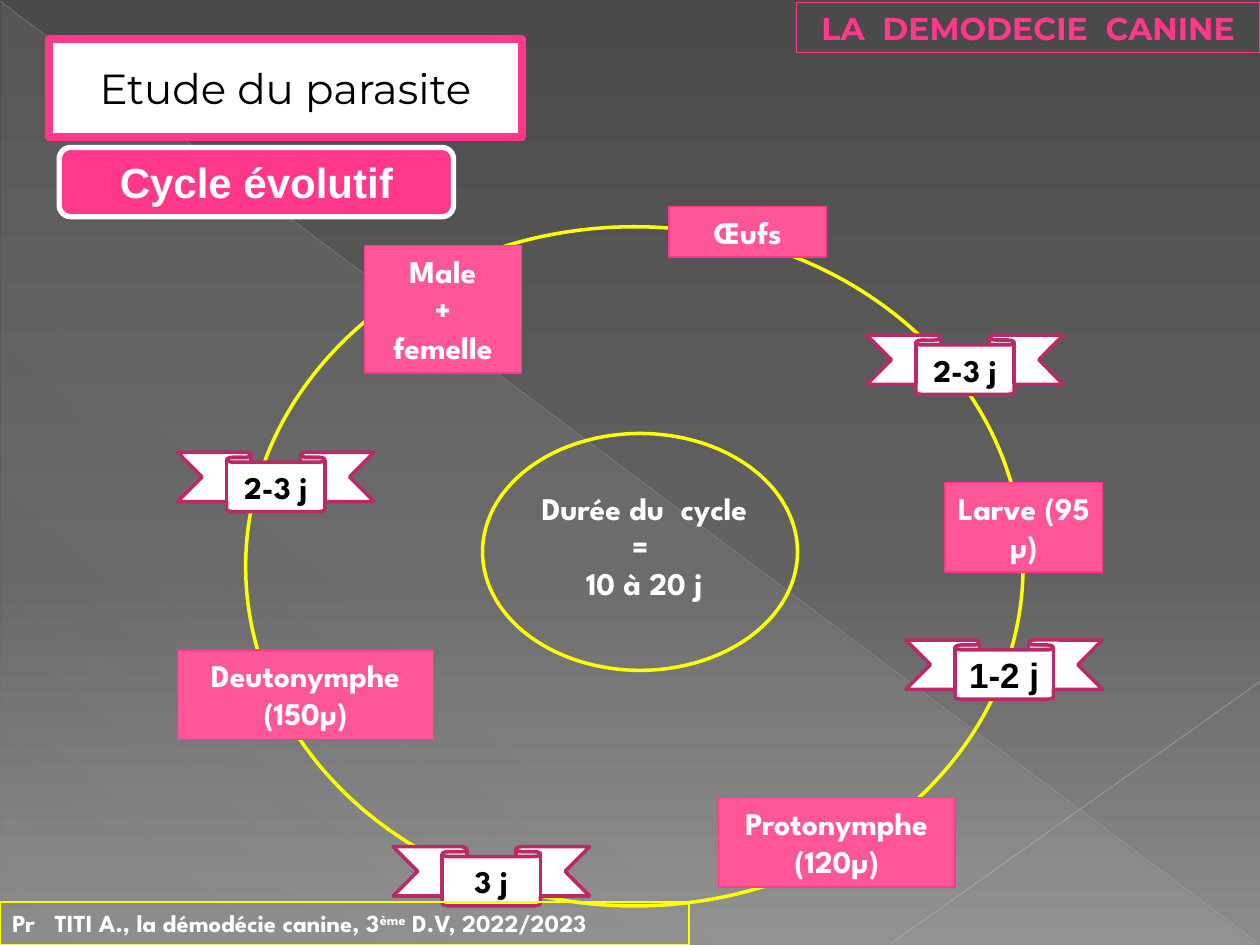
from dataclasses import dataclass, field
from typing import Optional

from lxml.etree import SubElement
from pptx import Presentation
from pptx.dml.color import RGBColor
from pptx.enum.shapes import MSO_CONNECTOR, MSO_SHAPE as Shape
from pptx.enum.text import MSO_ANCHOR as Anchor, MSO_AUTO_SIZE as AutoSize, PP_ALIGN as Align
from pptx.oxml.ns import qn
from pptx.util import Inches, Pt


@dataclass(frozen=True)
class Theme:
    pink: str = "FF388C"
    light_pink: str = "FF5698"
    dark_pink: str = "BD2968"
    yellow: str = "FFFF00"
    white: str = "FFFFFF"
    black: str = "000000"
    veil: str = "D2D2D2"
    body: str = "League Spartan"
    heading: str = "Montserrat"
    plain: str = "Arial"
    title_size: int = 24
    large: int = 20
    normal: int = 18
    small: int = 14


T = Theme()


@dataclass
class Text:
    lines: tuple
    color: str = T.white
    font: str = T.body
    size: int = T.normal
    bold: bool = True
    frame: dict = field(default_factory=lambda: {"auto_size": AutoSize.SHAPE_TO_FIT_TEXT})
    align: Align = Align.CENTER


@dataclass
class Box:
    at: tuple
    kind: Shape = Shape.RECTANGLE
    fill: Optional[str] = None
    line: str = T.pink
    width: float = 0.75
    text: Optional[Text] = None


MIDDLE = {"auto_size": AutoSize.NONE, "vertical_anchor": Anchor.MIDDLE}


def stage(at: tuple, *lines: str) -> Box:
    return Box(at, fill=T.light_pink, text=Text(lines))


def duration(left: float, top: float, label: str, **style) -> Box:
    text = Text((label,), T.black, frame=MIDDLE, **style)
    return Box((left, top, 1.56, 0.47), Shape.DOWN_RIBBON, T.white, T.dark_pink, 2, text)


def ring(*at: float) -> Box:
    return Box(at, Shape.OVAL, line=T.yellow, width=2)


CYCLE = [
    ring(1.95, 1.8, 6.17, 5.39),
    stage((2.89, 1.95, 1.25, 1.01), "Male", "+", "femelle"),
    stage((5.31, 1.64, 1.25, 0.4), "Œufs"),
    stage((7.5, 3.83, 1.25, 0.71), "Larve (95 µ)"),
    stage((5.7, 6.33, 1.88, 0.71), "Protonymphe", "(120µ)"),
    stage((1.41, 5.16, 2.03, 0.71), "Deutonymphe", "(150µ)"),
    duration(6.88, 2.66, "2-3 j"),
    duration(7.19, 5.08, "1-2 j", font=T.plain, size=T.large),
    duration(3.12, 6.72, "3 j"),
    duration(1.41, 3.59, "2-3 j"),
]
TITLE = Box((0.39, 0.31, 3.75, 0.78), fill=T.white, width=4.5, text=Text(
    ("Etude du parasite",), T.black, T.heading, T.title_size, False, MIDDLE))
SUBTITLE = Box((0.47, 1.17, 3.13, 0.55), Shape.ROUNDED_RECTANGLE, T.pink, T.white, 3, Text(
    ("Cycle évolutif",), font=T.plain, size=T.title_size, frame=MIDDLE))
TOTAL = Text(("Durée du  cycle", "= ", "10 à 20 j"))
TOPIC = Box((6.32, 0.02, 3.68, 0.4), text=Text(
    ("LA  DEMODECIE  CANINE",), T.pink, T.heading,
    frame={"auto_size": AutoSize.SHAPE_TO_FIT_TEXT, "word_wrap": False}))
# A line given as a tuple alternates normal and superscript runs.
FOOTER = Box((0, 7.16, 5.47, 0.34), line=T.yellow, text=Text(
    (("Pr   TITI A., la démodécie canine, 3", "ème", " D.V, 2022/2023"),),
    size=T.small, align=Align.LEFT))


def rgb(color: str) -> RGBColor:
    return RGBColor.from_string(color)


def set_attrs(target, values: dict) -> None:
    for name, value in values.items():
        setattr(target, name, value)


def add_alpha(color_element, percent: int) -> None:
    SubElement(color_element, qn("a:alpha"), val=str(percent * 1000))


def set_gradient(fill, parent, stops: list, angle: int) -> None:
    """Fill with (position, colour, opacity) stops; the angle runs clockwise."""
    fill.solid()
    solid = parent.find(qn("a:solidFill"))
    grad = parent.makeelement(qn("a:gradFill"), {"rotWithShape": "1"})
    gs_list = SubElement(grad, qn("a:gsLst"))
    for position, color, opacity in stops:
        gs = SubElement(gs_list, qn("a:gs"), pos=str(position * 1000))
        clr = SubElement(gs, qn("a:srgbClr"), val=color)
        if opacity < 100:
            add_alpha(clr, opacity)
    SubElement(grad, qn("a:lin"), ang=str(angle * 60000), scaled="0")
    parent.replace(solid, grad)


def write(tf, text: Text) -> None:
    set_attrs(tf, {"word_wrap": True, "vertical_anchor": Anchor.TOP, **text.frame})
    for i, line in enumerate(text.lines):
        p = tf.paragraphs[0] if i == 0 else tf.add_paragraph()
        p.alignment = text.align
        for j, part in enumerate((line,) if isinstance(line, str) else line):
            r = p.add_run()
            r.text = part
            set_attrs(r.font, {"name": text.font, "size": Pt(text.size), "bold": text.bold})
            r.font.color.rgb = rgb(text.color)
            if j % 2:
                r.font._element.set("baseline", "30000")


def style(sp, box: Box) -> None:
    if box.fill:
        sp.fill.solid()
        sp.fill.fore_color.rgb = rgb(box.fill)
    else:
        sp.fill.background()
    sp.line.color.rgb = rgb(box.line)
    sp.line.width = Pt(box.width)
    if box.text:
        write(sp.text_frame, box.text)


def add_box(s, box: Box) -> None:
    sp = s.shapes.add_shape(box.kind, *map(Inches, box.at))
    sp.shadow.inherit = False
    style(sp, box)


def add_line(s, ends: tuple, color: str, width: float, opacity: int) -> None:
    line = s.shapes.add_connector(MSO_CONNECTOR.STRAIGHT, *map(Inches, ends))
    line.line.color.rgb = rgb(color)
    line.line.width = Pt(width)
    sp_pr = line._element.spPr
    add_alpha(sp_pr.find(".//" + qn("a:srgbClr")), opacity)
    SubElement(sp_pr, qn("a:effectLst"))


def add_backdrop(s) -> None:
    fill = s.background.fill
    fill.solid()
    set_gradient(fill, s._element.find(".//" + qn("p:bgPr")),
                 [(0, "4A4A4A", 100), (60, "626262", 100), (100, "8C8C8C", 100)], 90)
    sp = s.shapes.add_shape(Shape.RIGHT_TRIANGLE, *map(Inches, (0.01, 0.02, 9.98, 7.48)))
    sp.shadow.inherit = False
    sp.line.fill.background()
    set_gradient(sp.fill, sp._element.spPr,
                 [(0, T.veil, 10), (70, T.veil, 8), (100, T.veil, 1)], 133)
    add_line(s, (0, 0.01, 9.99, 7.49), "BFBFBF", 0.39, 35)
    add_line(s, (10, 5.41, 7.07, 7.49), "C6C6C6", 0.47, 45)


def add_title(s, box: Box) -> None:
    sp = s.shapes.title
    set_attrs(sp, dict(zip(("left", "top", "width", "height"), map(Inches, box.at))))
    style(sp, box)
    s.shapes._spTree.append(sp._element)  # bring in front of the backdrop


def main() -> None:
    prs = Presentation()
    set_attrs(prs, {"slide_width": Inches(10), "slide_height": Inches(7.5)})
    s = prs.slides.add_slide(prs.slide_layouts[5])
    add_backdrop(s)
    for box in CYCLE:
        add_box(s, box)
    add_title(s, TITLE)
    add_box(s, SUBTITLE)
    write(s.shapes.add_textbox(*map(Inches, (3.75, 3.83, 2.73, 1.01))).text_frame, TOTAL)
    for box in (ring(3.83, 3.44, 2.5, 1.88), TOPIC, FOOTER):
        add_box(s, box)
    prs.save("out.pptx")


if __name__ == "__main__":
    main()
